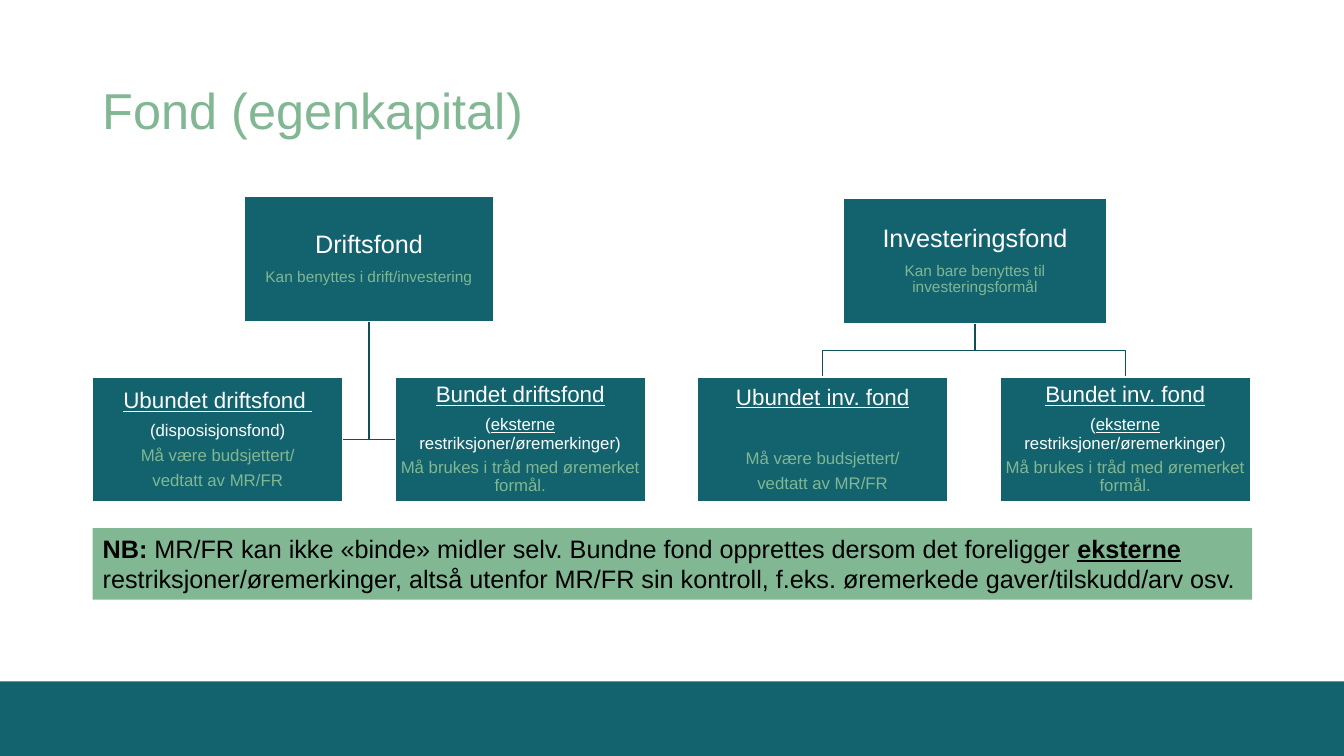
from pptx import Presentation
from pptx.dml.color import RGBColor
from pptx.enum import shapes, text
from pptx.util import Inches, Pt

COLORS = {"teal": "12636E", "green": "81B793", "line": "0E4F58",
          "white": "FFFFFF", "black": "000000"}
FONT = "Arial"


# Content: a paragraph is a dict of runs (text, format) and spacing
def line(content, size, color="white", **extra):
    return {"runs": [(content, {})], "size": size, "color": color, **extra}


EXTERNAL = [
    {"runs": [("(", {}), ("eksterne", {"underline": True}),
              (" restriksjoner/øremerkinger)", {})], "size": 12, "color": "white"},
    line("Må brukes i tråd med øremerket formål.", 12, "green"),
]
BUDGETED = [line("Må være budsjettert/", 12, "green"),
            line("vedtatt av MR/FR", 12, "green")]

TITLE = [line("Fond (egenkapital)", 36, "green")]
FUNDS = [
    {"at": (2.42, 1.95), "width": 2.48, "branch": "side",
     "text": [line("Driftsfond", 18),
              line("Kan benyttes i drift/investering", 11, "green")],
     "children": [
         [line("Ubundet driftsfond ", 16, underline=True),
          line("(disposisjonsfond)", 12)] + BUDGETED,
         [line("Bundet driftsfond", 16, underline=True)] + EXTERNAL]},
    {"at": (8.36, 1.97), "width": 2.62, "branch": "top",
     "text": [line("Investeringsfond", 18),
              line("Kan bare benyttes til investeringsformål", 11, "green")],
     "children": [
         [line("Ubundet inv. fond", 16, underline=True, after=29)] + BUDGETED,
         [line("Bundet inv. fond", 16, underline=True)] + EXTERNAL]},
]
NOTE = [{"runs": [
    ("NB: ", {"bold": True}),
    ("MR/FR kan ikke «binde» midler selv. Bundne fond opprettes dersom det foreligger ", {}),
    ("eksterne", {"bold": True, "underline": True}),
    (" restriksjoner/øremerkinger, altså utenfor MR/FR sin kontroll, "
     "f.eks. øremerkede gaver/tilskudd/arv osv.", {}),
], "size": 18, "color": "black"}]

# Layout in inches
LEFT, CONTENT_WIDTH = 0.92, 11.5
BOX_WIDTH, BOX_HEIGHT = 2.48, 1.24
CHILD_TOP, CHILD_PITCH = 3.74, 3.0
SPACE_AFTER = 0.39  # share of the text size

presentation = Presentation()
presentation.slide_width, presentation.slide_height = Inches(13.33), Inches(7.5)
slide = presentation.slides.add_slide(presentation.slide_layouts[6])


def rgb(name):
    return RGBColor.from_string(COLORS[name])


def write(shape, paragraphs, align=text.PP_ALIGN.LEFT, anchor=text.MSO_ANCHOR.MIDDLE,
          inset=None, spacing=0.9, after=0):
    frame = shape.text_frame
    frame.word_wrap = True
    frame.vertical_anchor = anchor
    if inset is not None:
        frame.margin_left = frame.margin_right = Inches(inset)
        frame.margin_top = frame.margin_bottom = Inches(inset)
    for index, item in enumerate(paragraphs):
        paragraph = frame.paragraphs[0] if index == 0 else frame.add_paragraph()
        paragraph.alignment = align
        paragraph.line_spacing = spacing
        paragraph.space_after = Pt(item.get("after", after * item["size"]))
        for content, style in item["runs"]:
            run = paragraph.add_run()
            run.text = content
            run.font.name, run.font.size = FONT, Pt(item["size"])
            run.font.color.rgb = rgb(item["color"])
            run.font.bold = style.get("bold", False)
            run.font.underline = style.get("underline", item.get("underline", False))


def add_rectangle(left, top, width, height, fill, outline=None):
    shape = slide.shapes.add_shape(shapes.MSO_SHAPE.RECTANGLE, Inches(left),
                                   Inches(top), Inches(width), Inches(height))
    shape.shadow.inherit = False
    shape.fill.solid()
    shape.fill.fore_color.rgb = rgb(fill)
    if outline:
        shape.line.color.rgb = rgb(outline)
        shape.line.width = Pt(1)
    else:
        shape.line.fill.background()
    return shape


def add_fund_box(left, top, width, paragraphs):
    box = add_rectangle(left, top, width, BOX_HEIGHT, "teal", "white")
    write(box, paragraphs, align=text.PP_ALIGN.CENTER, inset=0.01, after=SPACE_AFTER)


def add_branch(points):
    start, *rest = [(Inches(x), Inches(y)) for x, y in points]
    builder = slide.shapes.build_freeform(*start)
    builder.add_line_segments(rest, close=False)
    branch = builder.convert_to_shape()
    branch.shadow.inherit = False
    branch.fill.background()
    branch.line.color.rgb = rgb("line")
    branch.line.width = Pt(1)


# Footer band and title
add_rectangle(0, 6.76, 13.33, 0.74, "teal")
title = slide.shapes.add_textbox(Inches(LEFT), Inches(0.4),
                                 Inches(CONTENT_WIDTH), Inches(1.45))
write(title, TITLE)

# Fund trees: branches first, then boxes
for fund_index, fund in enumerate(FUNDS):
    left, top = fund["at"]
    center, bottom = left + fund["width"] / 2, top + BOX_HEIGHT
    child_lefts = [LEFT + CHILD_PITCH * (2 * fund_index + side) for side in (0, 1)]
    for side, child_left in enumerate(child_lefts):
        if fund["branch"] == "side":
            middle = CHILD_TOP + BOX_HEIGHT / 2
            edge = child_left + (BOX_WIDTH if side == 0 else 0)
            add_branch([(center, bottom), (center, middle), (edge, middle)])
        else:
            middle = (bottom + CHILD_TOP) / 2
            target = child_left + BOX_WIDTH / 2
            add_branch([(center, bottom), (center, middle),
                        (target, middle), (target, CHILD_TOP)])
    add_fund_box(left, top, fund["width"], fund["text"])
    for child_left, paragraphs in zip(child_lefts, fund["children"]):
        add_fund_box(child_left, CHILD_TOP, BOX_WIDTH, paragraphs)

# Note
note = add_rectangle(LEFT, 5.24, CONTENT_WIDTH, 0.71, "green")
write(note, NOTE, anchor=text.MSO_ANCHOR.TOP, spacing=1.0)

presentation.save("out.pptx")
